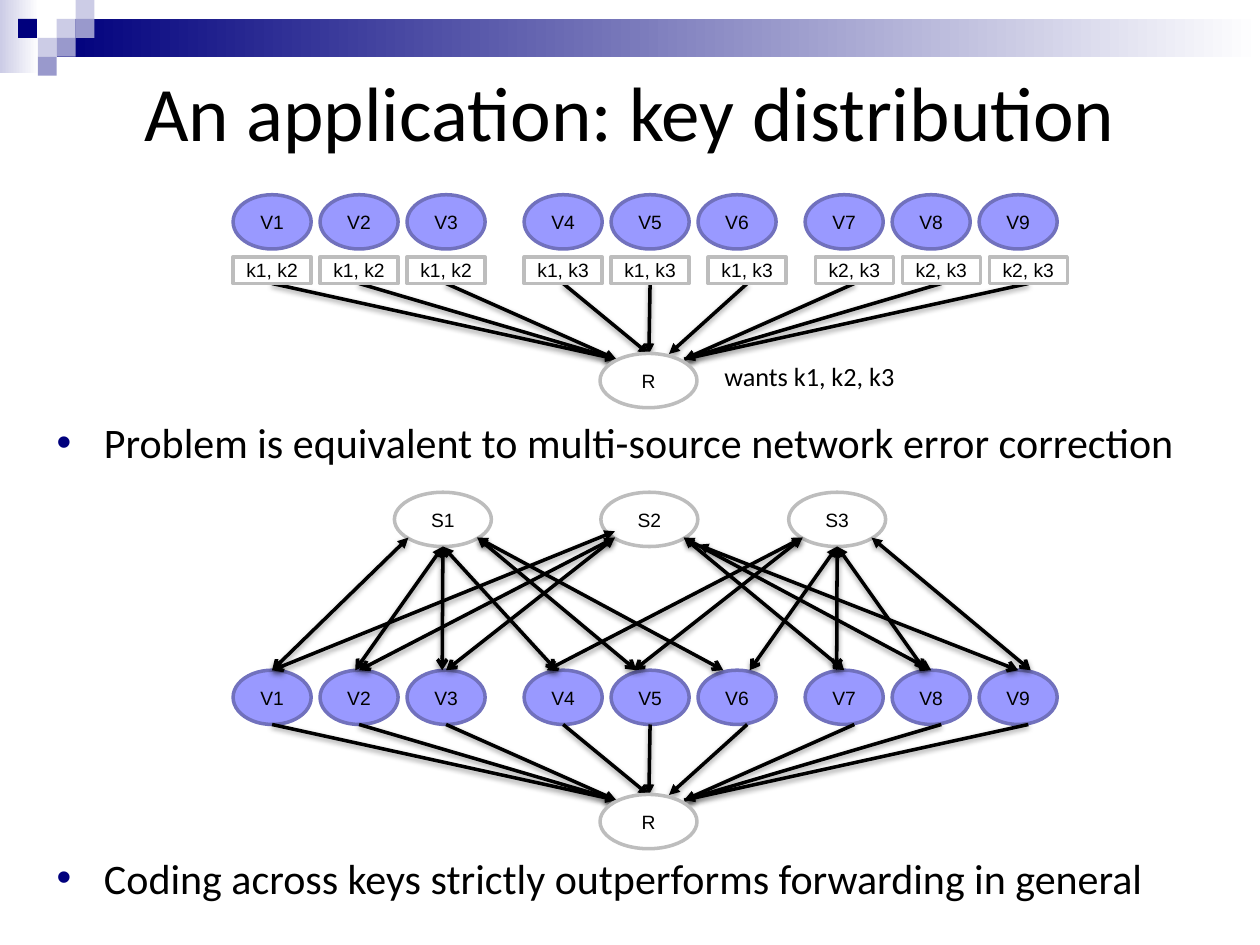
import pptx
import pptx.dml.color
import pptx.enum.shapes
import pptx.enum.text
import pptx.oxml
import pptx.oxml.ns
import pptx.util

Pt = pptx.util.Pt
SHAPE = pptx.enum.shapes.MSO_SHAPE
ALIGN = pptx.enum.text.PP_ALIGN
ANCHOR = pptx.enum.text.MSO_ANCHOR
AUTO = pptx.enum.text.MSO_AUTO_SIZE

COLORS = {
    "black": "000000", "white": "FFFFFF", "navy": "00007D",
    "pale": "CCCCE6", "mid": "9999CC", "violet": "9999FF",
    "violet_edge": "7171BD", "gray_edge": "BDBDBD",
}

# Node grid, in points
NODE_W, NODE_H, STEP = 44.6, 31, 49.7
NODE_X = [left + i * STEP for left in (133.2, 299.5, 460.1) for i in range(3)]
KEY_X = [x + (5.8 if i >= 5 else 0) for i, x in enumerate(NODE_X)]
KEYS = ["k1, k2"] * 3 + ["k1, k3"] * 3 + ["k2, k3"] * 3
TOP_Y, KEY_Y, KEY_H, LOWER_Y = 111.3, 146.9, 15.1, 383
HUB_W, R_X, R_Y, SOURCE_Y = 55.4, 342.9, 202, 281.3
LOWER_SHIFT = 252

# Where a link leaves a source (dx, dy)
PORTS = {"left": (8, 25.9), "bottom": (27.7, 31), "right": (47.3, 25.9),
         "upper": (8, 22.3), "outer": (HUB_W, 30)}
# Left edge of each source, and the x of the link ends for each port
SOURCES = {
    "S2": (343.4, {"upper": [155.5], "left": [205.2, 254.9],
                   "right": [482.4, 532.1], "outer": [581.8]}),
    "S1": (225.4, {"left": [155.5], "bottom": [203, 252.7, 318],
                   "right": [363.6, 413.3]}),
    "S3": (450.7, {"left": [312.5, 362.2], "bottom": [428.4, 478.1, 528.5],
                   "right": [589]}),
}


def rgb(name):
    return pptx.dml.color.RGBColor.from_string(COLORS[name])


def set_attrs(obj, values):
    for name, value in values.items():
        setattr(obj, name, value)


def place(sp, x, y, w, h):
    set_attrs(sp, {"left": Pt(x), "top": Pt(y), "width": Pt(w), "height": Pt(h)})


def write(p, text, size, font):
    r = p.add_run()
    r.text = text
    set_attrs(r.font, {"size": Pt(size), "name": font})
    r.font.color.rgb = rgb("black")


def add_xml(parent, xml):
    tag, rest = xml.split(" ", 1)
    parent.append(pptx.oxml.parse_xml(
        f"<a:{tag} {pptx.oxml.ns.nsdecls('a')} {rest}"))


def add_block(slide, x, y, w, h, *fill):
    """Borderless rectangle, plain with one colour or a gradient with two."""
    sp = slide.shapes.add_shape(SHAPE.RECTANGLE, Pt(x), Pt(y), Pt(w), Pt(h))
    sp.shadow.inherit = False
    sp.line.fill.background()
    if len(fill) == 1:
        sp.fill.solid()
        sp.fill.fore_color.rgb = rgb(fill[0])
        return
    sp.fill.gradient()
    sp.fill.gradient_angle = 0
    for stop, name in zip(sp.fill.gradient_stops, fill):
        stop.color.rgb = rgb(name)


def add_node(slide, kind, text, x, y, w, h, fill="white", edge="gray_edge"):
    sp = slide.shapes.add_shape(kind, Pt(x), Pt(y), Pt(w), Pt(h))
    sp.shadow.inherit = False
    sp.fill.solid()
    sp.fill.fore_color.rgb = rgb(fill)
    sp.line.color.rgb = rgb(edge)
    sp.line.width = Pt(2)
    tf = sp.text_frame
    set_attrs(tf, {"margin_left": 0, "margin_right": 0, "margin_top": 0,
                   "margin_bottom": 0, "word_wrap": False,
                   "vertical_anchor": ANCHOR.MIDDLE})
    p = tf.paragraphs[0]
    p.alignment = ALIGN.CENTER
    write(p, text, 11, "Arial")


def add_hub(slide, text, x, y):
    add_node(slide, SHAPE.OVAL, text, x, y, HUB_W, NODE_H)


def add_nodes(slide, y):
    for i, x in enumerate(NODE_X, 1):
        add_node(slide, SHAPE.OVAL, f"V{i}", x, y, NODE_W, NODE_H,
                 "violet", "violet_edge")


def add_link(slide, start, end, head=True, tail=False):
    ln = slide.shapes.add_connector(
        pptx.enum.shapes.MSO_CONNECTOR.STRAIGHT, *map(Pt, start + end))
    ln.line.color.rgb = rgb("black")
    ln.line.width = Pt(2)
    line = ln.line._get_or_add_ln()
    if head:
        add_xml(line, 'headEnd type="triangle"/>')
    if tail:
        add_xml(line, 'tailEnd type="arrow"/>')
    add_xml(ln._element.spPr,
            'effectLst ><a:outerShdw blurRad="40000" dist="20000" dir="5400000" '
            f'rotWithShape="0"><a:srgbClr val="{COLORS["black"]}">'
            '<a:alpha val="38000"/></a:srgbClr></a:outerShdw></a:effectLst>')


def add_fan(slide, dy=0):
    """Links from the nine columns into the receiver."""
    left, middle, inner, right = (352.1, 205.2), (370.8, 202.3), (382.3, 202.3), (391, 205.2)
    ports = [left] * 3 + [middle] * 2 + [inner] + [right] * 3
    for i, ((px, py), x) in enumerate(zip(ports, KEY_X)):
        add_link(slide, (px, py + dy), (x + NODE_W / 2, KEY_Y + KEY_H + dy), head=i < 8)


def add_source(slide, name):
    x, links = SOURCES[name]
    add_hub(slide, name, x, SOURCE_Y)
    for port, targets in links.items():
        dx, dy = PORTS[port]
        for target in targets:
            add_link(slide, (x + dx, SOURCE_Y + dy), (target, LOWER_Y), tail=True)


def add_banner(slide):
    add_block(slide, 0, 0, 22.3, 41.8, "pale", "white")
    add_block(slide, 32.4, 10.8, 687.6, 21.6, "navy", "white")
    side = 10.8
    for x, y, fill in ((32.4, 10.8, "pale"), (43.2, 0, "pale"), (43.2, 10.8, "mid"),
                       (21.6, 21.6, "pale"), (10.3, 10.8, "navy"),
                       (32.4, 21.6, "mid"), (21.6, 32.4, "mid")):
        add_block(slide, x, y, side, side, fill)


def add_title(slide, text):
    sp = slide.shapes.title
    place(sp, 36, 9.4, 648, 108)
    sp.text_frame.vertical_anchor = ANCHOR.MIDDLE
    p = sp.text_frame.paragraphs[0]
    p.alignment = ALIGN.CENTER
    write(p, text, 44, "Calibri")


def add_bullets(slide, items):
    sp = slide.placeholders[1]
    place(sp, 25.2, 100.1, 680.4, 306)
    tf = sp.text_frame
    set_attrs(tf, {"auto_size": AUTO.NONE, "margin_top": Pt(138),
                   "vertical_anchor": ANCHOR.TOP})
    for i, (text, gap) in enumerate(items):
        p = tf.add_paragraph() if i else tf.paragraphs[0]
        p.space_before = Pt(gap)
        pPr = p._p.get_or_add_pPr()
        add_xml(pPr, f'buClr ><a:srgbClr val="{COLORS["navy"]}"/></a:buClr>')
        add_xml(pPr, 'buChar char="•"/>')
        write(p, text, 24, "Calibri")


def add_note(slide, text):
    sp = slide.shapes.add_textbox(Pt(406.1), Pt(202.3), Pt(113), Pt(25.2))
    tf = sp.text_frame
    set_attrs(tf, {"word_wrap": False, "auto_size": AUTO.SHAPE_TO_FIT_TEXT})
    p = tf.paragraphs[0]
    p.alignment = ALIGN.CENTER
    write(p, text, 15, "Calibri")


def main():
    prs = pptx.Presentation()
    set_attrs(prs, {"slide_width": Pt(720), "slide_height": Pt(540)})
    slide = prs.slides.add_slide(prs.slide_layouts[1])

    # Banner and text; the last bullet clears the lower receiver
    add_banner(slide)
    add_title(slide, "An application: key distribution")
    add_bullets(slide, [
        ("Problem is equivalent to multi-source network error correction", 0),
        ("Coding across keys strictly outperforms forwarding in general", 220),
    ])

    # Upper diagram: nodes holding keys
    add_nodes(slide, TOP_Y)
    add_fan(slide)
    for x, keys in zip(KEY_X, KEYS):
        add_node(slide, SHAPE.RECTANGLE, keys, x, KEY_Y, NODE_W, KEY_H)
    add_hub(slide, "R", R_X, R_Y)
    add_note(slide, "wants k1, k2, k3")

    # Lower diagram: sources, nodes and receiver
    add_nodes(slide, LOWER_Y)
    for name in SOURCES:
        add_source(slide, name)
    add_fan(slide, LOWER_SHIFT)
    add_hub(slide, "R", R_X, R_Y + LOWER_SHIFT)

    prs.save("out.pptx")


if __name__ == "__main__":
    main()
